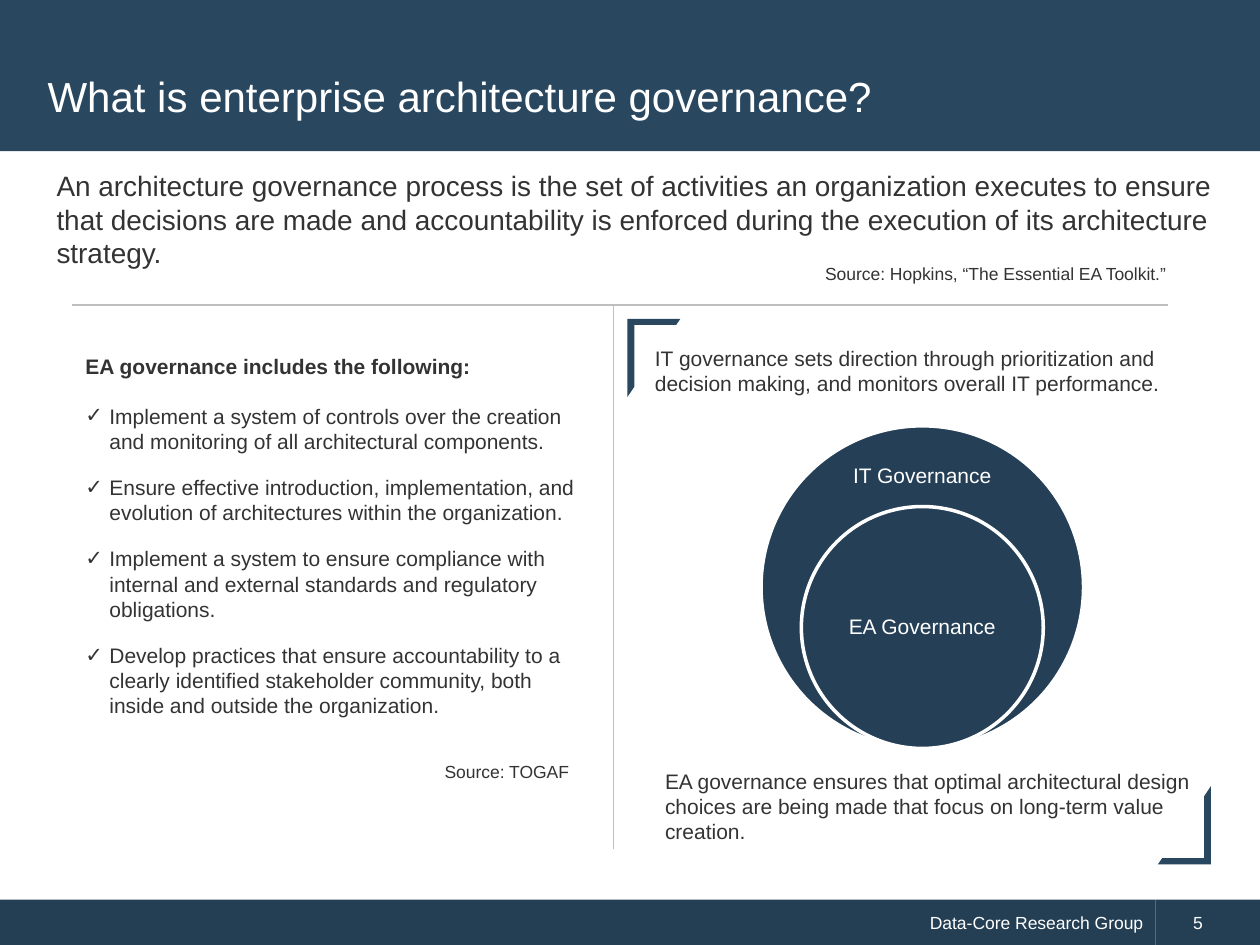
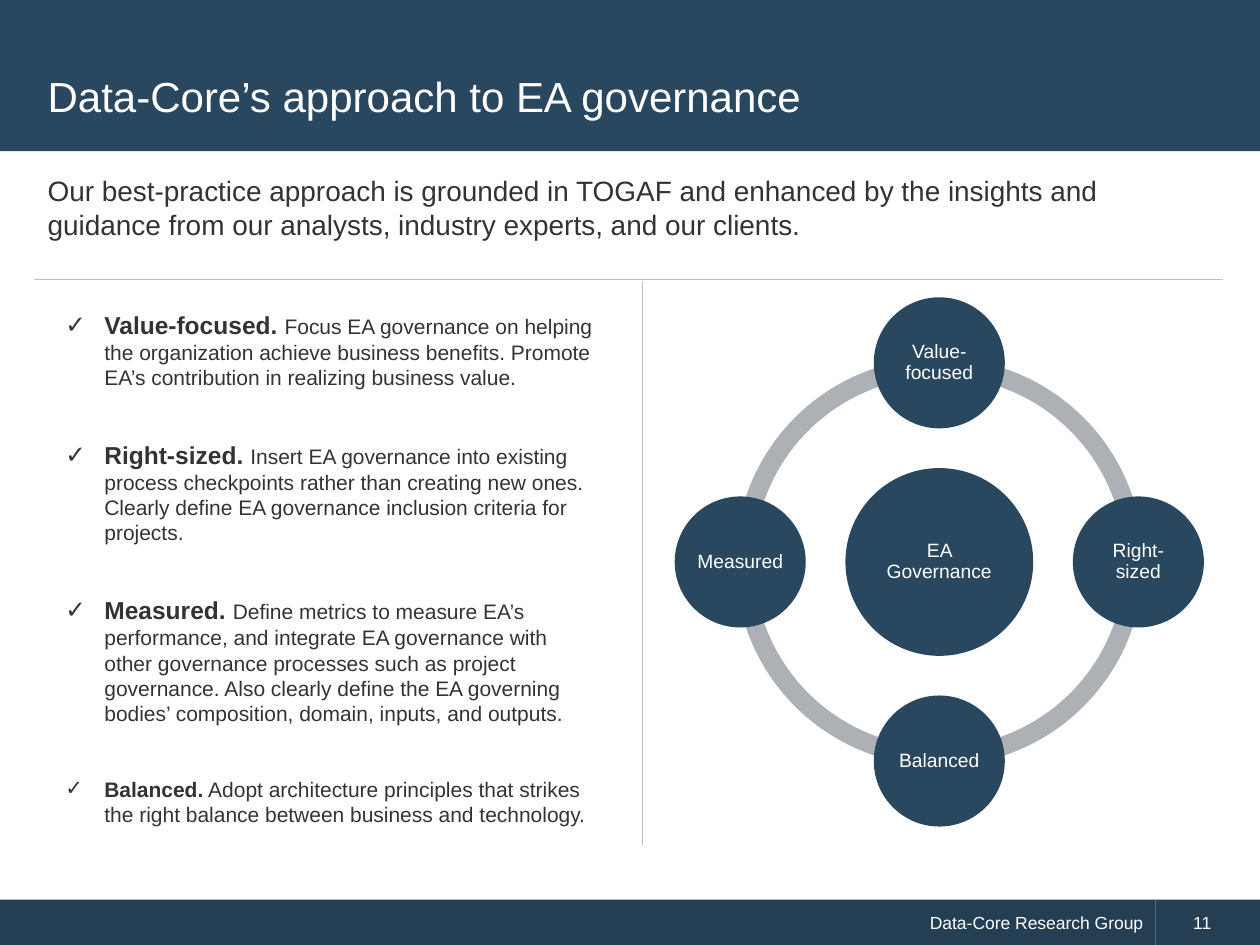
from lxml import etree
from pptx import Presentation
from pptx.dml import color
from pptx.enum import shapes, text
from pptx.oxml import ns
from pptx.util import Inches, Pt

COLORS = {"title band": "29475F", "footer": "243F54", "body": "333333",
          "white": "FFFFFF", "rule": "BFBFBF", "accent": "29475F",
          "venn": "254056", "ring": "ADB1B6"}
FONT = "Arial"
COMPANY = "Data-Core"
CHECK = "✓"
LEFT, CENTER, RIGHT = text.PP_ALIGN.LEFT, text.PP_ALIGN.CENTER, text.PP_ALIGN.RIGHT
TOP, MIDDLE = text.MSO_ANCHOR.TOP, text.MSO_ANCHOR.MIDDLE
KIND = shapes.MSO_SHAPE


def add_box(slide, kind, left, top, width, height, fill, outline=None):
    """Add a flat preset shape with an optional outline."""
    shape = slide.shapes.add_shape(kind, Inches(left), Inches(top), Inches(width), Inches(height))
    shape.shadow.inherit = False
    shape.fill.solid()
    shape.fill.fore_color.rgb = color.RGBColor.from_string(COLORS[fill])
    if outline:
        shape.line.color.rgb = color.RGBColor.from_string(COLORS[outline])
        shape.line.width = Pt(2)
    else:
        shape.line.fill.background()
    return shape


def write(target, paragraphs, ink="body", align=LEFT, anchor=TOP,
          bullet_indent=0, before=0, after=0, spacing=None):
    """Fill a shape with paragraphs, each a list of (words, size, bold) runs."""
    frame = target.text_frame
    frame.word_wrap = True
    frame.vertical_anchor = anchor
    for index, runs in enumerate(paragraphs):
        paragraph = frame.add_paragraph() if index else frame.paragraphs[0]
        paragraph.alignment = align
        paragraph.space_before = Pt(before if index else 0)
        paragraph.space_after = Pt(after)
        if spacing:
            paragraph.line_spacing = spacing
        if bullet_indent:
            properties = paragraph._p.get_or_add_pPr()
            properties.set("marL", str(Inches(bullet_indent)))
            properties.set("indent", str(-Inches(bullet_indent)))
            etree.SubElement(properties, ns.qn("a:buFont")).set("typeface", FONT)
            etree.SubElement(properties, ns.qn("a:buChar")).set("char", CHECK)
        for words, size, bold in runs:
            run = paragraph.add_run()
            run.text = words
            run.font.name = FONT
            run.font.size = Pt(size)
            run.font.bold = bold
            run.font.color.rgb = color.RGBColor.from_string(COLORS[ink])


presentation = Presentation()
presentation.slide_width = Inches(10)
presentation.slide_height = Inches(7.5)

# Shared frame: footer, title band, intro and dividing lines
pages = [
    {"title": "What is enterprise architecture governance?", "number": "5",
     "intro": "An architecture governance process is the set of activities an organization "
              "executes to ensure that decisions are made and accountability is enforced "
              "during the execution of its architecture strategy.",
     "intro box": (0.35, 1.29, 9.38, 1.01),
     "rules": [(0.57, 2.42, 9.27, 2.42), (4.87, 2.41, 4.87, 6.74)]},
    {"title": f"{COMPANY}’s approach to EA governance", "number": "11",
     "intro": "Our best-practice approach is grounded in TOGAF and enhanced by the insights "
              "and guidance from our analysts, industry experts, and our clients.",
     "intro box": (0.28, 1.33, 9.18, 0.64),
     "rules": [(0.27, 2.22, 9.71, 2.22), (5.1, 2.23, 5.1, 6.71)]},
]
for page in pages:
    slide = presentation.slides.add_slide(presentation.slide_layouts[6])
    footer = add_box(slide, KIND.RECTANGLE, 0, 7.14, 9.17, 0.36, "footer")
    write(footer, [[(f"{COMPANY} Research Group", 10, False)]], "white", RIGHT, MIDDLE)
    number = add_box(slide, KIND.RECTANGLE, 9.17, 7.14, 0.83, 0.36, "footer")
    number.text_frame.margin_left = Inches(0.3)
    write(number, [[(page["number"], 10, False)]], "white", LEFT, MIDDLE)
    add_box(slide, KIND.RECTANGLE, 0, 0, 10, 1.2, "title band")
    title = slide.shapes.add_textbox(Inches(0.28), Inches(0.28), Inches(9.43), Inches(0.96))
    write(title, [[(page["title"], 24, False)]], "white", LEFT, MIDDLE)
    intro = slide.shapes.add_textbox(*[Inches(length) for length in page["intro box"]])
    write(intro, [[(page["intro"], 16, False)]])
    for ends in page["rules"]:
        rule = slide.shapes.add_connector(shapes.MSO_CONNECTOR.STRAIGHT,
                                          *[Inches(length) for length in ends])
        rule.line.color.rgb = color.RGBColor.from_string(COLORS["rule"])
        rule.line.width = Pt(0.75)
        etree.SubElement(rule._element.spPr, ns.qn("a:effectLst"))

definition_slide, approach_slide = presentation.slides

# Definition: headings, sources and statements
notes = [
    ("EA governance includes the following:", 12, True, 0.58, 2.76, 3.95, 0.3),
    ("Source: TOGAF", 10, False, 3.43, 5.99, 1.25, 0.27),
    ("Source: Hopkins, “The Essential EA Toolkit.”", 10, False, 6.45, 2.04, 3, 0.27),
    ("IT governance sets direction through prioritization and decision making, "
     "and monitors overall IT performance.", 12, False, 5.1, 2.69, 4.44, 0.51),
    ("EA governance ensures that optimal architectural design choices are being made "
     "that focus on long-term value creation.", 12, False, 5.18, 6.05, 4.44, 0.71),
]
for words, size, bold, *place in notes:
    note = definition_slide.shapes.add_textbox(*[Inches(length) for length in place])
    write(note, [[(words, size, bold)]])

# Definition: checklist
activities = [
    "Implement a system of controls over the creation and monitoring of all "
    "architectural components.",
    "Ensure effective introduction, implementation, and evolution of architectures "
    "within the organization.",
    "Implement a system to ensure compliance with internal and external standards "
    "and regulatory obligations.",
    "Develop practices that ensure accountability to a clearly identified stakeholder "
    "community, both inside and outside the organization.",
]
checklist = definition_slide.shapes.add_textbox(Inches(0.58), Inches(3.15), Inches(4.19), Inches(3))
write(checklist, [[(activity, 12, False)] for activity in activities],
      bullet_indent=0.19, before=6, after=6)

# Definition: corner brackets
for left, top, rotation in [(4.98, 2.53, 0), (9.19, 6.24, 180)]:
    bracket = add_box(definition_slide, KIND.HALF_FRAME, left, top, 0.42, 0.62, "accent")
    bracket.adjustments[0] = 0.118
    bracket.adjustments[1] = 0.129
    bracket.rotation = rotation

# Definition: nested circles sharing their lowest point
venn_center, venn_bottom = 7.32, 5.94
for label, diameter, label_top, label_height in [("IT Governance", 2.56, 3.57, 0.43),
                                                 ("EA Governance", 1.92, 4.5, 0.96)]:
    add_box(definition_slide, KIND.OVAL, venn_center - diameter / 2, venn_bottom - diameter,
            diameter, diameter, "venn", "white")
    caption = definition_slide.shapes.add_textbox(
        Inches(venn_center - 0.7), Inches(label_top), Inches(1.4), Inches(label_height))
    write(caption, [[(label, 12, False)]], "white", CENTER, MIDDLE, spacing=0.9)

# Approach: principles
principles = [
    [("Value-focused. ", 14, True),
     ("Focus EA governance on helping the organization achieve business benefits. "
      "Promote EA’s contribution in realizing business value.", 12, False)],
    [("Right-sized. ", 14, True),
     ("Insert EA governance into existing process checkpoints rather than creating new "
      "ones. Clearly define EA governance inclusion criteria for projects.", 12, False)],
    [("Measured. ", 14, True),
     ("Define metrics to measure EA’s performance, and integrate EA governance with other "
      "governance processes such as project governance. Also clearly define the EA "
      "governing bodies’ composition, domain, inputs, and outputs.", 12, False)],
    [("Balanced.", 12, True),
     (" Adopt architecture principles that strikes the right balance between business "
      "and technology.", 12, False)],
]
principle_list = approach_slide.shapes.add_textbox(
    Inches(0.42), Inches(2.41), Inches(4.45), Inches(4.29))
write(principle_list, principles, bullet_indent=0.31, before=28.8)

# Approach: ring of quarter arcs; a quarter turn is 54 adjustment units
hub_x, hub_y, orbit, ring_size = 7.455, 4.46, 1.58, 3.24
for quarter in range(4):
    arc = add_box(approach_slide, KIND.BLOCK_ARC, hub_x - ring_size / 2, hub_y - ring_size / 2,
                  ring_size, ring_size, "ring")
    arc.adjustments[0] = quarter * 54
    arc.adjustments[1] = (quarter + 1) % 4 * 54
    arc.adjustments[2] = 0.046

# Approach: hub and four nodes, placed by their step from the hub
nodes = [("EA Governance", 0, 0, 1.49), ("Value- focused", 0, -1, 1.04),
         ("Right- sized", 1, 0, 1.04), ("Balanced", 0, 1, 1.04), ("Measured", -1, 0, 1.04)]
for label, step_x, step_y, diameter in nodes:
    node = add_box(approach_slide, KIND.OVAL, hub_x + step_x * orbit - diameter / 2,
                   hub_y + step_y * orbit - diameter / 2, diameter, diameter, "accent")
    node.text_frame.margin_left = node.text_frame.margin_right = Inches(0.02)
    node.text_frame.margin_top = node.text_frame.margin_bottom = Inches(0.02)
    write(node, [[(label, 11, False)]], "white", CENTER, MIDDLE, spacing=0.9)

presentation.save("out.pptx")
